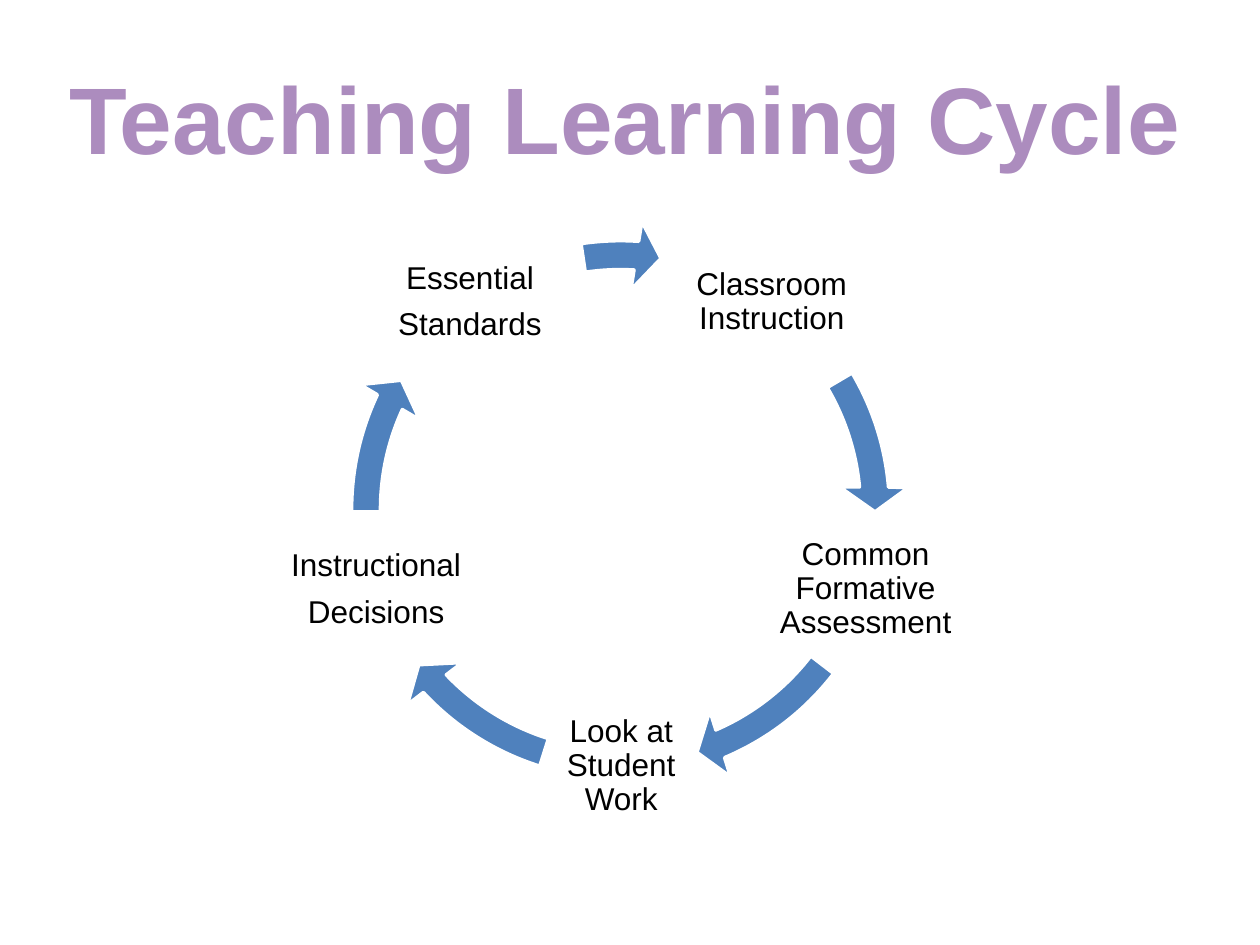
from pptx import Presentation
from pptx import util as u
from pptx.dml.color import RGBColor
from pptx.enum import shapes, text

PURPLE = RGBColor(0xAC, 0x8C, 0xBE)
BLUE = RGBColor(0x4F, 0x81, 0xBD)
WHITE = RGBColor(0xFF, 0xFF, 0xFF)
BLACK = RGBColor(0, 0, 0)

RING = (2.63, 1.75, 4.59, 4.59)
STEPS = [
    ("Classroom\vInstruction", 5.25, 1.79, 1.75, 329.43, 354.9),
    ("Common\vFormative\vAssessment", 5.64, 4.07, 2.46, 37.55, 66.93),
    ("Look at Student Work", 4.32, 5.47, 1.22, 107.48, 136.86),
    ("Instructional\nDecisions", 1.9, 4.07, 2.17, 179.5, 204.98),
    ("Essential\nStandards", 2.83, 1.79, 1.8, 261.55, 273.56),
]


def box(*sizes):
    return [u.Inches(size) for size in sizes]


def style(frame, size, color, bold=False):
    frame.word_wrap = True
    frame.vertical_anchor = text.MSO_ANCHOR.MIDDLE
    for para in frame.paragraphs:
        para.alignment = text.PP_ALIGN.CENTER
        for run in para.runs:
            run.font.name = "Arial"
            run.font.size = u.Pt(size)
            run.font.bold = bold
            run.font.color.rgb = color


def add_title(slide, words):
    title = slide.shapes.title
    title.left, title.top, title.width, title.height = box(0, 0.3, 9.92, 1.25)
    title.text_frame.text = words
    style(title.text_frame, 54, PURPLE, True)


def add_label(slide, words, left, top, width):
    label = slide.shapes.add_textbox(*box(left, top, width, 1.22))
    frame = label.text_frame
    frame.text = words
    style(frame, 18, BLACK)
    inset = u.Inches(0.03)
    frame.margin_left = frame.margin_right = inset
    frame.margin_top = frame.margin_bottom = inset
    for para in frame.paragraphs:
        para.line_spacing = 0.9
        para.space_after = u.Pt(7)


def add_arrow(slide, start, end):
    arrow = slide.shapes.add_shape(shapes.MSO_SHAPE.CIRCULAR_ARROW, *box(*RING))
    arrow.shadow.inherit = False
    arrow.fill.solid()
    arrow.fill.fore_color.rgb = BLUE
    arrow.line.color.rgb = WHITE
    arrow.line.width = u.Pt(2)
    tip, unit = 5.6, 0.6
    values = (0.05, tip * unit, end * unit, start * unit, 0.06)
    for place, value in enumerate(values):
        arrow.adjustments[place] = value


def main():
    deck = Presentation()
    deck.slide_width, deck.slide_height = box(10, 7.5)
    slide = deck.slides.add_slide(deck.slide_layouts[5])
    add_title(slide, "Teaching Learning Cycle")
    for words, left, top, width, start, end in STEPS:
        add_label(slide, words, left, top, width)
        add_arrow(slide, start, end)
    deck.save("out.pptx")


if __name__ == "__main__":
    main()
